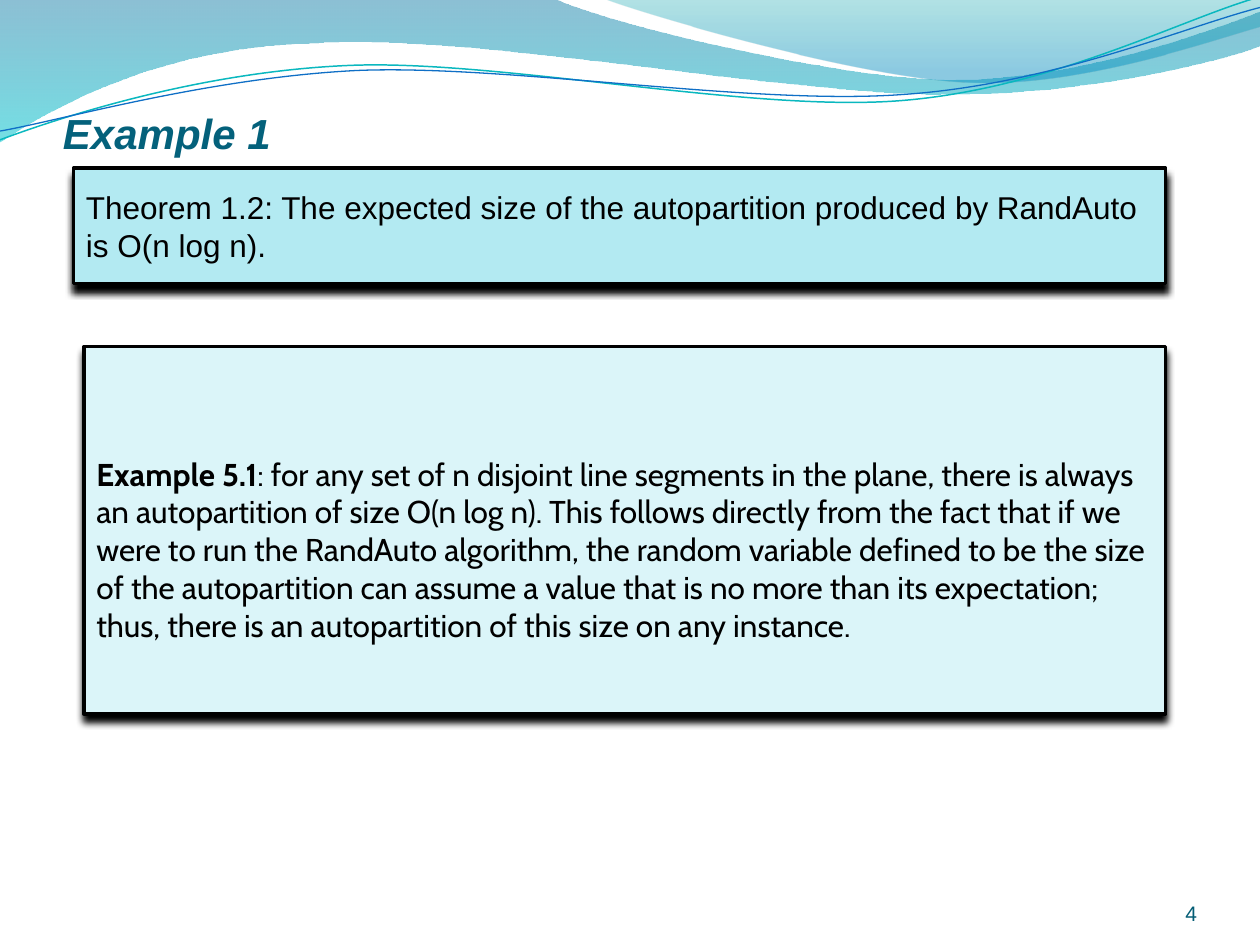
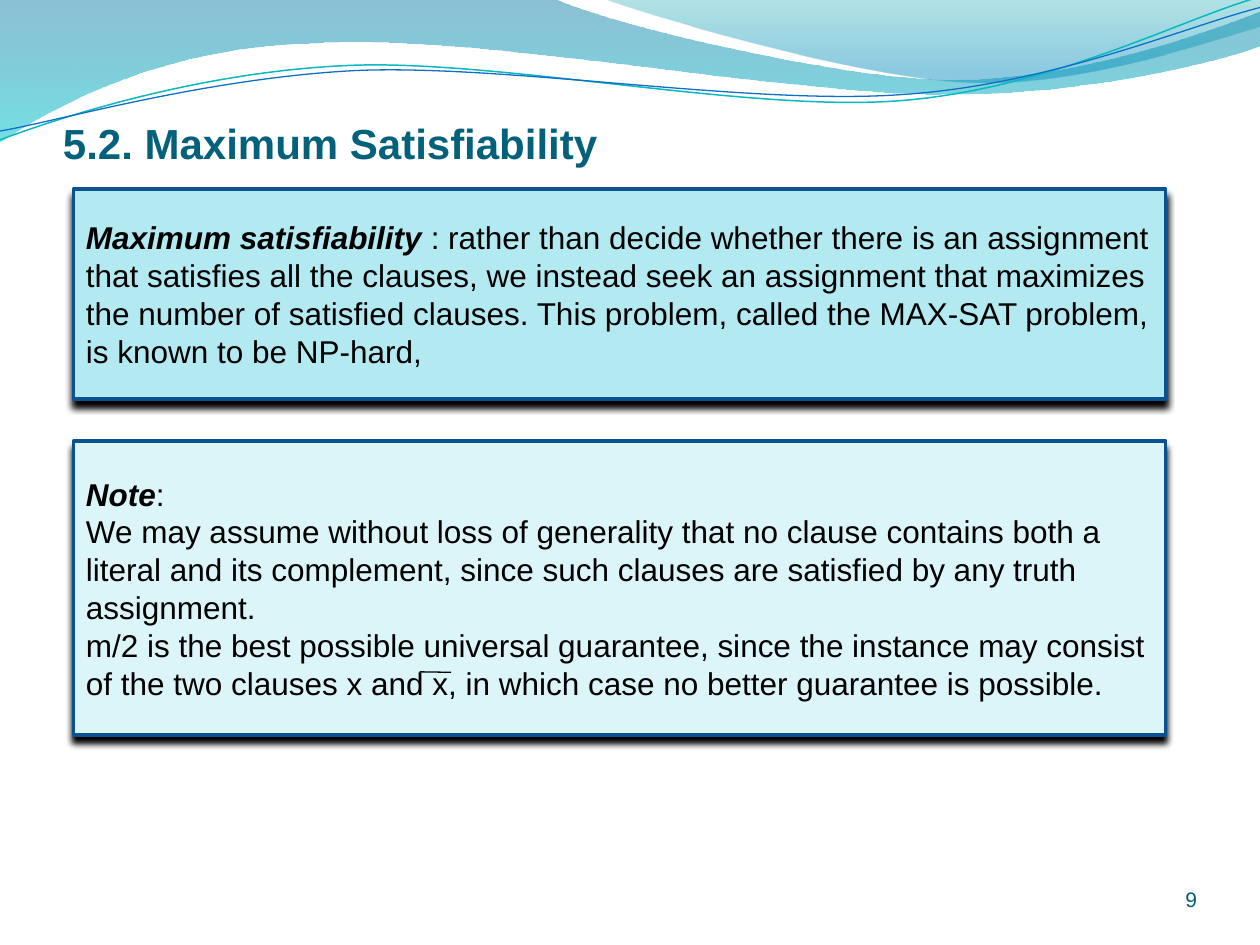
from math import cos, radians, sin

from lxml import etree
from pptx import Presentation
from pptx.dml.color import RGBColor
from pptx.enum.shapes import MSO_CONNECTOR, MSO_SHAPE
from pptx.enum.text import MSO_ANCHOR, PP_ALIGN
from pptx.oxml.ns import qn
from pptx.util import Pt

RECT = MSO_SHAPE.RECTANGLE
STRAIGHT = MSO_CONNECTOR.STRAIGHT
BOTTOM, MIDDLE = MSO_ANCHOR.BOTTOM, MSO_ANCHOR.MIDDLE
LEFT, RIGHT = PP_ALIGN.LEFT, PP_ALIGN.RIGHT

BLACK, NAVY = "000000", "0B5292"
STRONG_BOX, PALE_BOX = "B3EAF2", "DBF5F9"
TITLE = {"size": Pt(24), "name": "Arial", "bold": True}
NUMBER = {"size": Pt(12), "name": "Arial"}
BODY = {"size": Pt(18), "name": "Arial"}
CABIN = {"size": Pt(18), "name": "Cabin"}
BOLD = {"bold": True}
BOLD_ITALIC = {"bold": True, "italic": True}
WAVE_TILT = 2.7

WAVE_BANDS = [
    ([(0, 0), (316.8, -0.7),
      (342.7, 12.2, 478.1, 45.4, 545.8, 45.4),
      (614.2, 45.4, 689.8, 18.7, 720, 6.5), (720.7, 25.9),
      (707.8, 31.7, 626.4, 54.7, 537.1, 54),
      (447.8, 54, 275, 20.2, 185, 24.5),
      (92.9, 25.9, 33.1, 59.8, -0.7, 81.4), (0, 0)],
     [(0, "0074A1", 45), (1, "00C6CF", 55)]),
    ([(344.9, -0.7),
      (366.5, 7.9, 491, 44.6, 553.7, 46.8),
      (616.3, 49.7, 691.9, 23, 720, 15.1), (720, 0), (344.9, -0.7)],
     [(0, "00A1A9", 30), (0.8, "008BBF", 45)]),
]
WAVE_LINES = [
    ([(0, 79.9),
      (34.6, 67, 113.8, 41, 199.4, 37.4),
      (284.4, 33.8, 427, 64.1, 513.4, 57.6),
      (599.8, 51.1, 675.4, 10.8, 718.6, -1.4)],
     (359.3, 41.4), "0AB8BF", 0.85),
    ([(0, 74.9),
      (33.8, 69.1, 118.1, 44.6, 203.8, 40.3),
      (290.2, 36.7, 429.8, 60.5, 516.2, 54),
      (601.9, 48.2, 677.5, 15.1, 720, 4.3)],
     (359.6, 42.5), "0F6FC6", 0.75),
]


def rgb(value):
    return RGBColor.from_string(value)


def set_attributes(target, values):
    for name, value in values.items():
        setattr(target, name, value)


def set_line(line, color, width):
    line.color.rgb = rgb(color)
    line.width = Pt(width)


def turn(segments, center, degrees):
    cx, cy = center
    c, si = cos(radians(degrees)), sin(radians(degrees))
    turned = []
    for segment in segments:
        flat = []
        for x, y in zip(segment[::2], segment[1::2]):
            dx, dy = x - cx, y - cy
            flat += [cx + dx * c - dy * si, cy + dx * si + dy * c]
        turned.append(tuple(flat))
    return turned


def add_outline(s, segments, close):
    points = [(Pt(x), Pt(y)) for segment in segments
              for x, y in zip(segment[::2], segment[1::2])]
    builder = s.shapes.build_freeform(*points[0])
    builder.add_line_segments(points[1:], close=close)
    sp = builder.convert_to_shape()
    sp.shadow.inherit = False
    nodes = iter(list(sp._element.iter(qn("a:lnTo"))))
    for segment in segments[1:]:
        node = next(nodes)
        if len(segment) == 6:
            curve = etree.Element(qn("a:cubicBezTo"))
            node.addprevious(curve)
            for part in (node, next(nodes), next(nodes)):
                curve.append(part[0])
                part.getparent().remove(part)
    return sp


def add_wave_band(s, segments, stops):
    sp = add_outline(s, segments, True)
    sp.line.fill.background()
    sp.fill.gradient()
    sp.fill.gradient_angle = 270
    for stop, (position, color, _) in zip(sp.fill.gradient_stops, stops):
        stop.position = position
        stop.color.rgb = rgb(color)
    colors = sp._element.spPr.iter(qn("a:srgbClr"))
    for node, (_, _, opacity) in zip(list(colors), stops):
        etree.SubElement(node, qn("a:alpha"), val=str(opacity * 1000))


def add_wave_line(s, segments, center, color, width):
    sp = add_outline(s, turn(segments, center, WAVE_TILT), False)
    sp.rotation = 360 - WAVE_TILT
    sp.fill.background()
    set_line(sp.line, color, width)


def write(tf, paragraphs, base, color, align=LEFT):
    for i, runs in enumerate(paragraphs):
        p = tf.add_paragraph() if i else tf.paragraphs[0]
        p.alignment = align
        for text, extra in runs:
            r = p.add_run()
            r.text = text
            set_attributes(r.font, {**base, **extra})
            r.font.color.rgb = rgb(color)


def add_label(s, box, text, style, color, align=LEFT, top_inset=0):
    tf = s.shapes.add_textbox(*map(Pt, box)).text_frame
    set_attributes(tf, {"word_wrap": True, "vertical_anchor": BOTTOM,
                        "margin_left": 0, "margin_top": Pt(top_inset),
                        "margin_right": 0, "margin_bottom": 0})
    write(tf, [[(text, {})]], style, color, align)


def add_shadow(sp):
    sp.shadow.inherit = False
    effects = sp._element.spPr.find(qn("a:effectLst"))
    shadow = etree.SubElement(
        effects, qn("a:outerShdw"), blurRad=str(Pt(4)), dist=str(Pt(4)),
        dir="5400000", rotWithShape="0")
    etree.SubElement(shadow, qn("a:srgbClr"), val=BLACK)


def add_statement(s, box, fill, border, paragraphs, style=BODY, top_inset=3.6):
    sp = s.shapes.add_shape(RECT, *map(Pt, box))
    sp.fill.solid()
    sp.fill.fore_color.rgb = rgb(fill)
    set_line(sp.line, border, 2)
    add_shadow(sp)
    tf = sp.text_frame
    set_attributes(tf, {"word_wrap": True, "vertical_anchor": MIDDLE,
                        "margin_top": Pt(top_inset)})
    write(tf, paragraphs, style, BLACK)


def add_overline(s, x1, y1, x2, y2):
    line = s.shapes.add_connector(STRAIGHT, Pt(x1), Pt(y1), Pt(x2), Pt(y2))
    set_line(line.line, BLACK, 0.75)
    etree.SubElement(line._element.spPr, qn("a:effectLst"))


def add_base_slide(prs, title, title_box, title_style, number, number_top):
    s = prs.slides.add_slide(prs.slide_layouts[6])
    for band in WAVE_BANDS:
        add_wave_band(s, *band)
    for line in WAVE_LINES:
        add_wave_line(s, *line)
    add_label(s, title_box, title, {**TITLE, **title_style}, "04617B",
              top_inset=3.6)
    add_label(s, (624, number_top, 60, 28.8), number, NUMBER, "045D75", RIGHT)
    return s


def add_example_slide(prs):
    s = add_base_slide(prs, "Example 1", (36, 21.6, 648, 68.4),
                       {"italic": True}, "4", 500.4)
    add_statement(s, (42, 96, 624, 66), STRONG_BOX, BLACK, [
        [("Theorem 1.2: The expected size of the autopartition produced by "
          "RandAuto is O(n log n).", {})]])
    add_statement(s, (48, 198, 618, 210), PALE_BOX, BLACK, [
        [("Example 5.1", BOLD),
         (": for any set of n disjoint line segments in the plane, there is "
          "always an autopartition of size O(n log n). This follows directly "
          "from the fact that if we were to run the RandAuto algorithm, the "
          "random variable defined to be the size of the autopartition can "
          "assume a value that is no more than its expectation; thus, there "
          "is an autopartition of this size on any instance.", {})]],
        CABIN, top_inset=25.2)


def add_satisfiability_slide(prs):
    s = add_base_slide(prs, "5.2. Maximum Satisfiability",
                       (36, 55.4, 648, 40.3), {}, "9", 492)
    add_statement(s, (42, 108, 624, 120), STRONG_BOX, NAVY, [
        [("Maximum satisfiability ", BOLD_ITALIC),
         (": rather than decide whether there is an assignment that satisfies "
          "all the clauses, we instead seek an assignment that maximizes the "
          "number of satisfied clauses. This problem, called the MAX-SAT "
          "problem, is known to be NP-hard,", {})]])
    add_statement(s, (42, 252, 624, 168), PALE_BOX, NAVY, [
        [("Note", BOLD_ITALIC), (":", {})],
        [("We may assume without loss of generality that no clause contains "
          "both a literal and its complement, since such clauses are "
          "satisfied by any truth assignment.", {})],
        [("m/2 is the best possible universal guarantee, since the instance "
          "may consist of the two clauses x and x, in which case no better "
          "guarantee is possible.", {})]])
    add_overline(s, 257.8, 384.2, 239.8, 383.9)


def main():
    prs = Presentation()
    prs.slide_width, prs.slide_height = Pt(720), Pt(540)
    add_example_slide(prs)
    add_satisfiability_slide(prs)
    prs.save("out.pptx")


if __name__ == "__main__":
    main()
